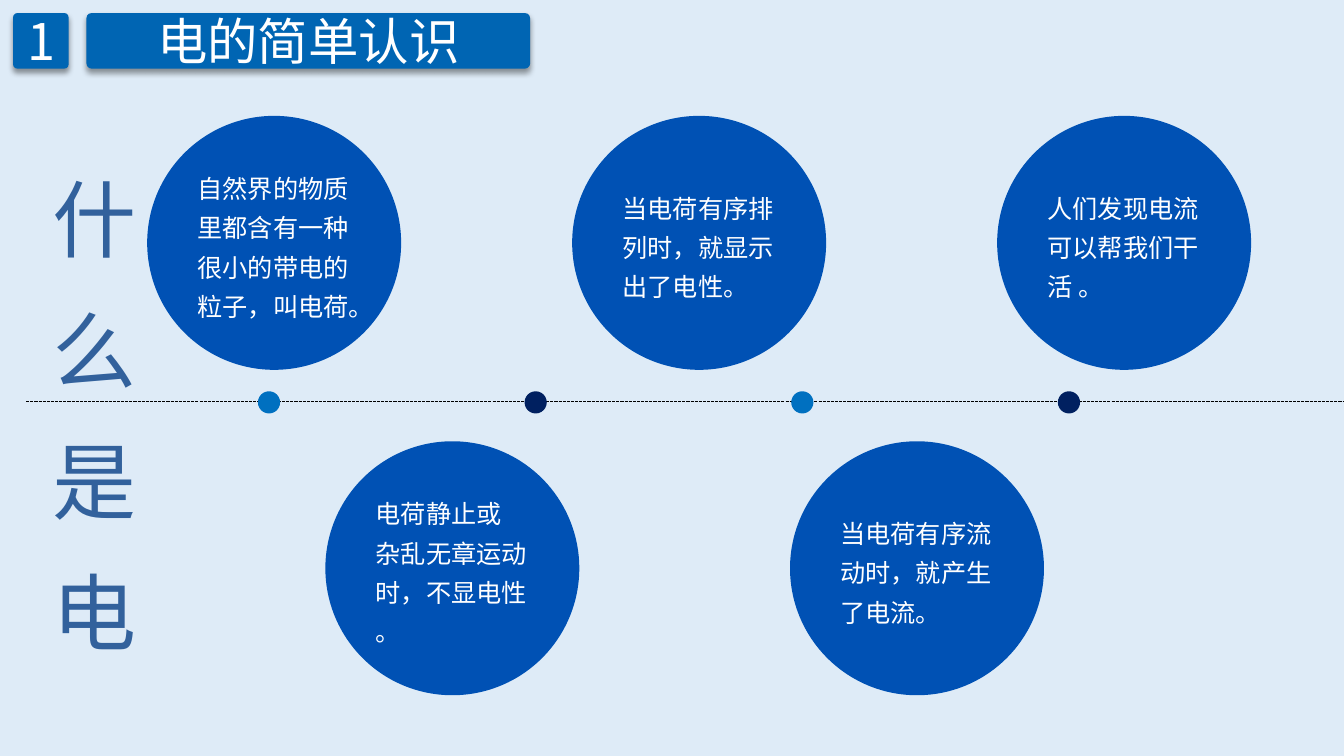
from pptx import Presentation
from pptx.dml.color import RGBColor
from pptx.enum import dml, shapes, text
from pptx.oxml import parse_xml
from pptx.oxml.ns import nsdecls, qn
from pptx.util import Cm, Pt

FONT = "Noto Sans CJK SC"
BACKGROUND = RGBColor(0xDE, 0xEB, 0xF7)
BANNER = RGBColor(0x00, 0x65, 0xB3)
BUBBLE = RGBColor(0x00, 0x51, 0xB4)
HEADING = RGBColor(0x32, 0x61, 0x9C)
DOT_COLORS = (RGBColor(0x00, 0x70, 0xC0), RGBColor(0x00, 0x20, 0x60))
WHITE = RGBColor(0xFF, 0xFF, 0xFF)
BLACK = RGBColor(0x00, 0x00, 0x00)

UPPER_FACTS = (
    "自然界的物质里都含有一种很小的带电的粒子，叫电荷。",
    "当电荷有序排列时，就显示出了电性。",
    "人们发现电流可以帮我们干活 。",
)
LOWER_FACTS = (
    "电荷静止或 杂乱无章运动时，不显电性 。",
    "当电荷有序流动时，就产生了电流。",
)
SHADOW = (
    f'<a:effectLst {nsdecls("a")}><a:outerShdw blurRad="{Pt(4)}" dist="{Pt(3)}" '
    'dir="5400000" algn="t" rotWithShape="0"><a:srgbClr val="000000">'
    '<a:alpha val="40000"/></a:srgbClr></a:outerShdw></a:effectLst>'
)


def write(shape, words, size, color, align, anchor, margins, spacing=1.0):
    """Fill a shape with text, one paragraph per line of words."""
    frame = shape.text_frame
    frame.text = words
    frame.word_wrap = True
    frame.vertical_anchor = anchor
    frame.margin_left = frame.margin_right = Cm(margins[0])
    frame.margin_top = frame.margin_bottom = Cm(margins[1])
    for paragraph in frame.paragraphs:
        paragraph.alignment = align
        paragraph.line_spacing = spacing
        for run in paragraph.runs:
            run.font.size = Pt(size)
            run.font.color.rgb = color
            run.font.name = FONT
            east_asian = parse_xml(f'<a:ea {nsdecls("a")} typeface="{FONT}"/>')
            run.font._element.find(qn("a:latin")).addnext(east_asian)


def add_filled(slide, kind, left, top, width, height, color):
    shape = slide.shapes.add_shape(kind, Cm(left), Cm(top), Cm(width), Cm(height))
    shape.shadow.inherit = False
    shape.fill.solid()
    shape.fill.fore_color.rgb = color
    shape.line.fill.background()
    return shape


def add_banner(slide, left, top, height):
    """Place the number tile and the title bar side by side."""
    tiles = (("1", 0, height, 0.076), ("电的简单认识", 1.85, 11.18, 0.091))
    for words, offset, width, rounding in tiles:
        tile = add_filled(slide, shapes.MSO_SHAPE.ROUNDED_RECTANGLE,
                          left + offset, top, width, height, BANNER)
        tile.adjustments[0] = rounding
        properties = tile._element.spPr
        properties.replace(properties.find(qn("a:effectLst")), parse_xml(SHADOW))
        write(tile, words, 36, WHITE, text.PP_ALIGN.CENTER,
              text.MSO_ANCHOR.MIDDLE, (0.33, 0.18))


def add_side_heading(slide, left, top, width, height):
    box = slide.shapes.add_textbox(Cm(left), Cm(top), Cm(width), Cm(height))
    write(box, "\n".join("什么是电"), 60, HEADING, text.PP_ALIGN.CENTER,
          text.MSO_ANCHOR.BOTTOM, (0, 0), 1.3)


def add_timeline(slide, left, right, middle):
    """Draw the dashed axis with evenly spaced dots."""
    axis = slide.shapes.add_connector(
        shapes.MSO_CONNECTOR.STRAIGHT, Cm(left), Cm(middle), Cm(right), Cm(middle))
    axis.line.color.rgb = BLACK
    axis.line.width = Pt(0.75)
    axis.line.dash_style = dml.MSO_LINE.SQUARE_DOT
    axis._element.spPr.append(parse_xml(f'<a:effectLst {nsdecls("a")}/>'))
    diameter, first, step = 0.56, 5.84, 6.72
    for index in range(4):
        add_filled(slide, shapes.MSO_SHAPE.OVAL, left + first + index * step,
                   middle - 0.25, diameter, diameter, DOT_COLORS[index % 2])


def add_bubble_row(slide, facts, left, top, step):
    diameter = 6.4
    for index, fact in enumerate(facts):
        bubble = add_filled(slide, shapes.MSO_SHAPE.OVAL, left + index * step,
                            top, diameter, diameter, BUBBLE)
        write(bubble, fact, 18, WHITE, text.PP_ALIGN.LEFT,
              text.MSO_ANCHOR.MIDDLE, (0.33, 0.18), 1.3)


def main():
    presentation = Presentation()
    presentation.slide_width, presentation.slide_height = Cm(33.87), Cm(19.05)
    slide = presentation.slides.add_slide(presentation.slide_layouts[6])
    slide.background.fill.solid()
    slide.background.fill.fore_color.rgb = BACKGROUND
    add_banner(slide, 0.33, 0.33, 1.4)
    add_side_heading(slide, 0.18, 2.97, 4.42, 13.69)
    add_timeline(slide, 0.66, 33.87, 10.11)
    add_bubble_row(slide, UPPER_FACTS, 3.71, 2.92, 10.71)
    add_bubble_row(slide, LOWER_FACTS, 8.2, 11.12, 11.71)
    presentation.save("out.pptx")


if __name__ == "__main__":
    main()
